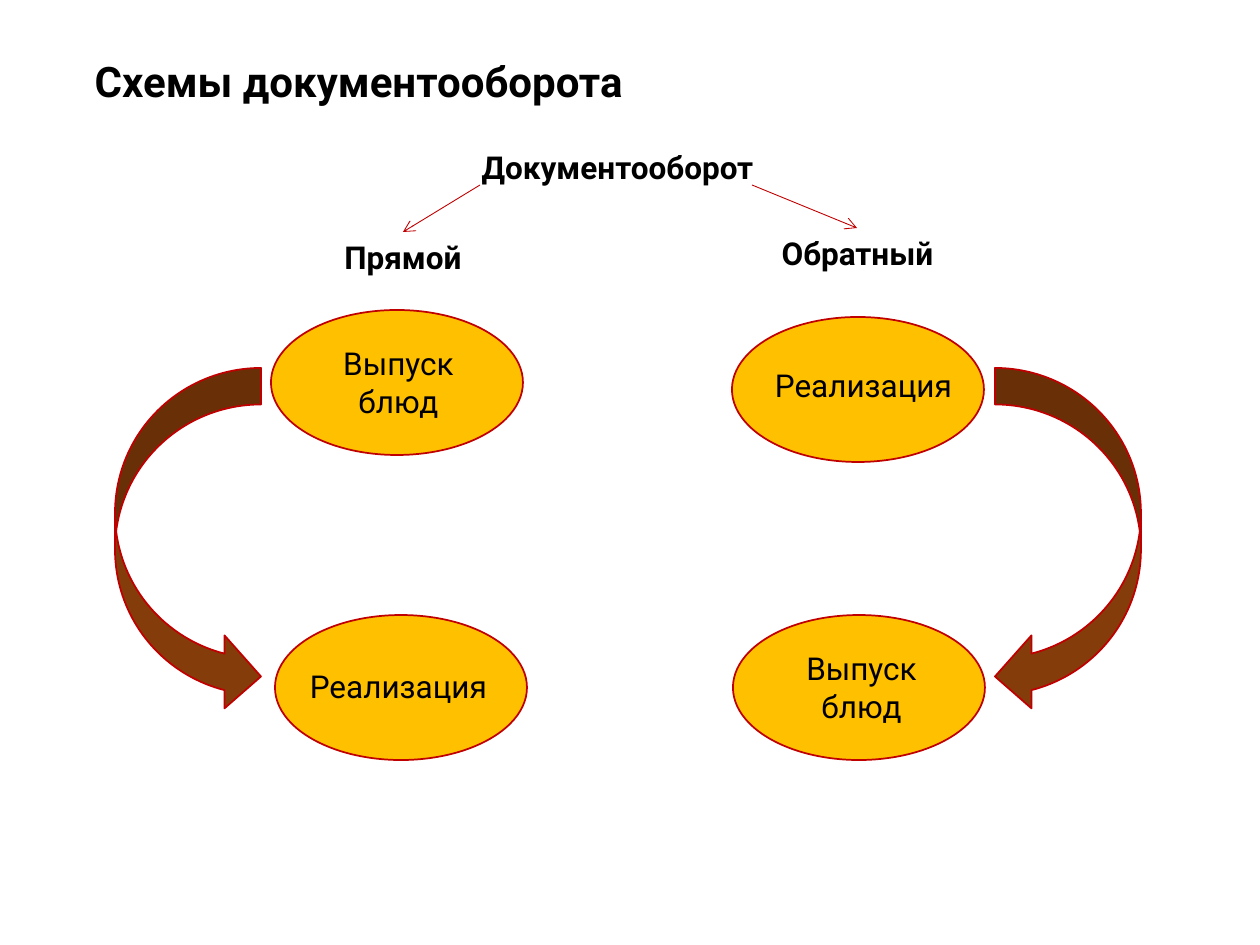
from lxml.etree import SubElement
from pptx import Presentation
from pptx.dml.color import RGBColor
from pptx.enum.shapes import MSO_CONNECTOR, MSO_SHAPE
from pptx.enum.text import MSO_ANCHOR, MSO_AUTO_SIZE, PP_ALIGN
from pptx.oxml.ns import qn
from pptx.util import Emu, Pt

PX_PER_INCH = 126


def px(length):
    return Emu(round(length * 914400 / PX_PER_INCH))


def color(value):
    return RGBColor.from_string(value)


class SchemeSlide:
    FONT = "Roboto"
    INK = "000000"
    OUTLINE = "C00000"
    STAGE = "FFC000"
    FLOW = "843C0B"

    def __init__(self, slide):
        self.slide = slide

    def add_words(self, frame, text, size, bold, align):
        paragraph = frame.paragraphs[0]
        paragraph.alignment = align
        run = paragraph.add_run()
        run.text = text
        run.font.name = self.FONT
        run.font.size = Pt(size)
        run.font.bold = bold
        run.font.color.rgb = color(self.INK)
        return paragraph

    def title(self, text, left, top, width, height):
        heading = self.slide.shapes.title
        heading.left, heading.top = px(left), px(top)
        heading.width, heading.height = px(width), px(height)
        frame = heading.text_frame
        frame.word_wrap = True
        frame.auto_size = MSO_AUTO_SIZE.NONE
        frame.vertical_anchor = MSO_ANCHOR.TOP
        self.add_words(frame, text, 24, True, PP_ALIGN.LEFT).line_spacing = 0.9

    def label(self, text, left, top, width, height=50, bold=False, wrap=True):
        box = self.slide.shapes.add_textbox(px(left), px(top), px(width), px(height))
        frame = box.text_frame
        frame.word_wrap = wrap
        frame.auto_size = MSO_AUTO_SIZE.SHAPE_TO_FIT_TEXT
        self.add_words(frame, text, 18, bold, PP_ALIGN.CENTER)

    def shape(self, kind, fill, left, top, width, height):
        shape = self.slide.shapes.add_shape(kind, px(left), px(top), px(width), px(height))
        shape.shadow.inherit = False
        shape.fill.solid()
        shape.fill.fore_color.rgb = color(fill)
        shape.line.color.rgb = color(self.OUTLINE)
        shape.line.width = Pt(1)
        return shape

    def stage(self, left, top):
        self.shape(MSO_SHAPE.OVAL, self.STAGE, left, top, 252, 145)

    def flow(self, left, mirrored):
        arrow = self.shape(MSO_SHAPE.CURVED_RIGHT_ARROW, self.FLOW, left, 368, 146, 345)
        if mirrored:
            arrow._element.spPr.find(qn("a:xfrm")).set("flipH", "1")

    def branch(self, x1, y1, x2, y2):
        connector = self.slide.shapes.add_connector(
            MSO_CONNECTOR.STRAIGHT, px(x1), px(y1), px(x2), px(y2))
        connector.line.color.rgb = color(self.OUTLINE)
        connector.line.width = Pt(0.5)
        properties = connector._element.spPr
        SubElement(properties.find(qn("a:ln")), qn("a:tailEnd"), type="arrow")
        SubElement(properties, qn("a:effectLst"))


def main():
    presentation = Presentation()
    presentation.slide_width, presentation.slide_height = px(1260), px(945)
    scheme = SchemeSlide(presentation.slides.add_slide(presentation.slide_layouts[5]))

    scheme.title("Схемы документооборота", 82, 55, 625, 79)
    scheme.label("Прямой", 326, 232, 154, bold=True, wrap=False)
    scheme.label("Обратный", 719, 228, 277, bold=True)

    for left, top in ((271, 310), (275, 615), (732, 317), (733, 615)):
        scheme.stage(left, top)
    for left, mirrored in ((115, False), (995, True)):
        scheme.flow(left, mirrored)

    for left, top in ((309, 338), (772, 643)):
        scheme.label("Выпуск блюд", left, top, 179, 89)
    for left, top in ((756, 360), (291, 661)):
        scheme.label("Реализация", left, top, 215)

    scheme.label("Документооборот", 456, 142, 323, bold=True, wrap=False)
    scheme.branch(480, 185, 403, 232)
    scheme.branch(752, 185, 857, 228)

    presentation.save("out.pptx")


if __name__ == "__main__":
    main()
